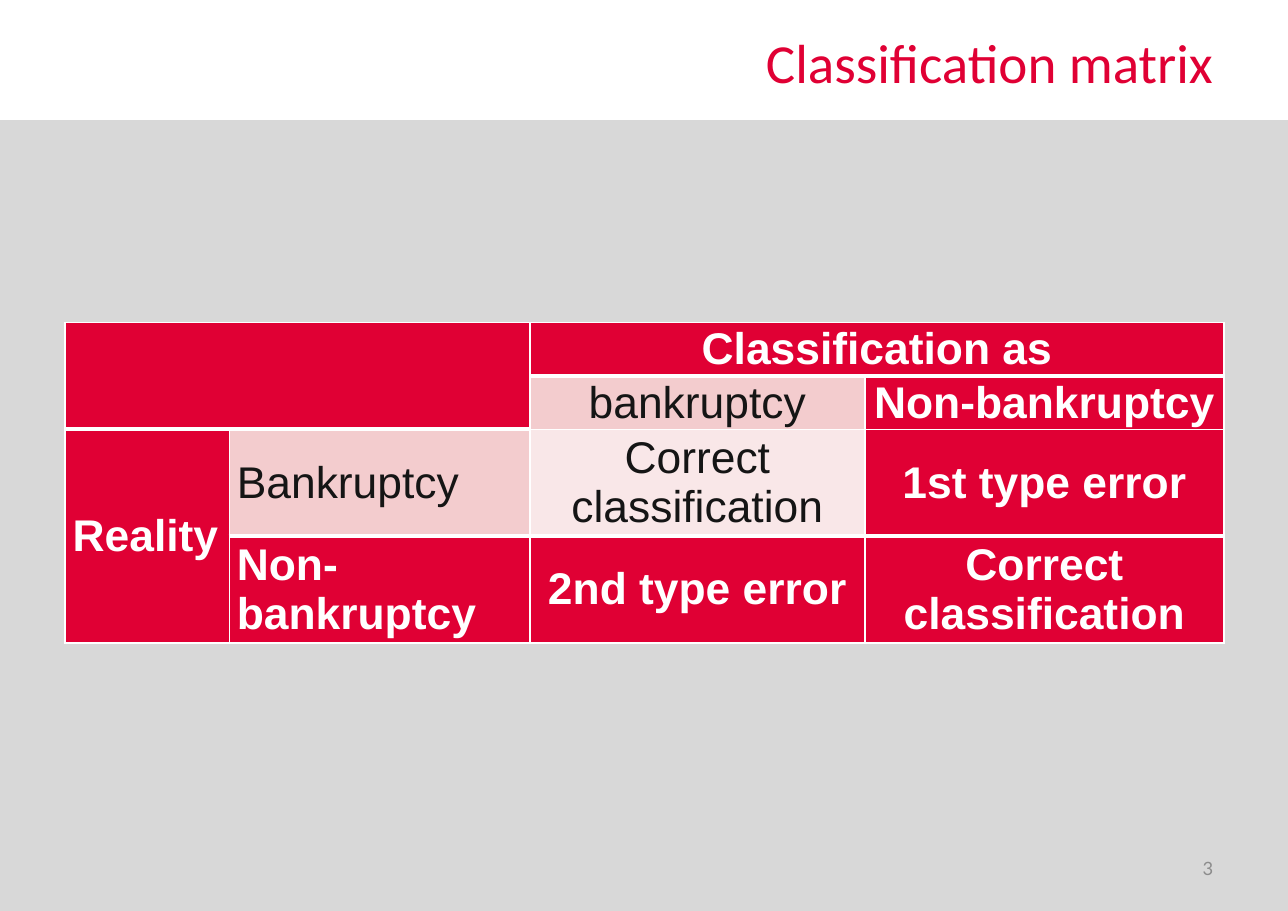
"""Builds a slide with a bankruptcy classification matrix."""
from dataclasses import dataclass

from lxml import etree
from pptx import Presentation
from pptx import util as u
from pptx.dml.color import RGBColor
from pptx.enum import shapes, text
from pptx.oxml import ns

ALIGN = text.PP_ALIGN
MIDDLE = text.MSO_ANCHOR.MIDDLE


@dataclass(frozen=True)
class Theme:
    red: str = "E00034"
    pink: str = "F3CCCE"
    pale: str = "F9E7E8"
    band: str = "D8D8D8"
    white: str = "FFFFFF"
    dark: str = "151515"
    grey: str = "8C8C8C"
    title_size: int = 36
    matrix_size: int = 29
    number_size: int = 12


@dataclass(frozen=True)
class Entry:
    row: int
    col: int
    words: str
    fill: str
    align: ALIGN = ALIGN.CENTER
    rows: int = 1
    cols: int = 1
    top: int = 1
    bottom: int = 1


def write(frame, words, *, size, font, color, align, bold=False, after=0):
    frame.word_wrap = True
    frame.vertical_anchor = MIDDLE
    paragraph = frame.paragraphs[0]
    paragraph.alignment = align
    paragraph.space_after = u.Pt(after)
    run = paragraph.add_run()
    run.text = words
    run.font.size = u.Pt(size)
    run.font.name = font
    run.font.bold = bold
    run.font.color.rgb = RGBColor.from_string(color)


class SlideBuilder:
    def __init__(self, slide, theme):
        self.slide = slide
        self.theme = theme

    def title(self, words, box):
        heading = self.slide.shapes.title
        heading.left, heading.top, heading.width, heading.height = map(u.Inches, box)
        write(heading.text_frame, words, size=self.theme.title_size, font="Calibri",
              color=self.theme.red, align=ALIGN.RIGHT)

    def band(self, box):
        background = self.slide.shapes.add_shape(
            shapes.MSO_SHAPE.RECTANGLE, *map(u.Inches, box))
        background.shadow.inherit = False
        background.fill.solid()
        background.fill.fore_color.rgb = RGBColor.from_string(self.theme.band)
        background.line.fill.background()

    def page_number(self, words, box):
        number = self.slide.shapes.add_textbox(*map(u.Inches, box))
        write(number.text_frame, words, size=self.theme.number_size, font="Lato",
              color=self.theme.grey, align=ALIGN.RIGHT)

    def borders(self, cell, top, bottom):
        properties = cell._tc.get_or_add_tcPr()
        for side, points in (("L", 1), ("R", 1), ("T", top), ("B", bottom)):
            edge = etree.SubElement(properties, ns.qn(f"a:ln{side}"), w=str(u.Pt(points)))
            paint = etree.SubElement(edge, ns.qn("a:solidFill"))
            etree.SubElement(paint, ns.qn("a:srgbClr"), val=self.theme.white)

    def matrix(self, box, widths, heights, entries):
        grid = self.slide.shapes.add_table(
            len(heights), len(widths), *map(u.Inches, box)).table
        for column, width in zip(grid.columns, widths):
            column.width = u.Inches(width)
        for row, height in zip(grid.rows, heights):
            row.height = u.Inches(height)
        for entry in entries:
            self.matrix_entry(grid, entry)

    def matrix_entry(self, grid, entry):
        last_row = entry.row + entry.rows
        last_col = entry.col + entry.cols
        origin = grid.cell(entry.row, entry.col)
        if entry.rows * entry.cols > 1:
            origin.merge(grid.cell(last_row - 1, last_col - 1))
        for row in range(entry.row, last_row):
            for col in range(entry.col, last_col):
                cell = grid.cell(row, col)
                self.borders(cell, entry.top, entry.bottom)
                cell.fill.solid()
                cell.fill.fore_color.rgb = RGBColor.from_string(entry.fill)
                cell.margin_left = cell.margin_right = u.Inches(0.07)
                cell.margin_top = cell.margin_bottom = 0
        if entry.words:
            on_red = entry.fill == self.theme.red
            write(origin.text_frame, entry.words, size=self.theme.matrix_size,
                  font="Arial", color=self.theme.white if on_red else self.theme.dark,
                  align=entry.align, bold=on_red, after=3)
            origin.vertical_anchor = MIDDLE


def main():
    theme = Theme()
    deck = Presentation()
    deck.slide_width, deck.slide_height = u.Inches(11.69), u.Inches(8.27)
    page = SlideBuilder(deck.slides.add_slide(deck.slide_layouts[5]), theme)
    page.band((0, 1.09, 11.69, 7.18))
    page.title("Classification matrix", (2.99, 0.2, 8.12, 0.72))
    page.page_number("3", (8.38, 7.66, 2.73, 0.44))
    justified = ALIGN.JUSTIFY
    page.matrix((0.59, 2.93, 10.52, 2.9), (1.49, 2.73, 3.04, 3.26),
                (0.48, 0.48, 0.97, 0.97), (
        Entry(0, 0, "", theme.red, rows=2, cols=2, bottom=3),
        Entry(0, 2, "Classification as", theme.red, cols=2, bottom=3),
        Entry(1, 2, "bankruptcy", theme.pink, top=3),
        Entry(1, 3, "Non-bankruptcy", theme.red, top=3),
        Entry(2, 0, "Reality", theme.red, justified, rows=2, top=3),
        Entry(2, 1, "Bankruptcy", theme.pink, justified, top=3, bottom=3),
        Entry(2, 2, "Correct classification", theme.pale, bottom=3),
        Entry(2, 3, "1st type error", theme.red, bottom=3),
        Entry(3, 1, "Non-bankruptcy", theme.red, justified, top=3),
        Entry(3, 2, "2nd type error", theme.red, top=3),
        Entry(3, 3, "Correct classification", theme.red, top=3),
    ))
    deck.save("out.pptx")


if __name__ == "__main__":
    main()
